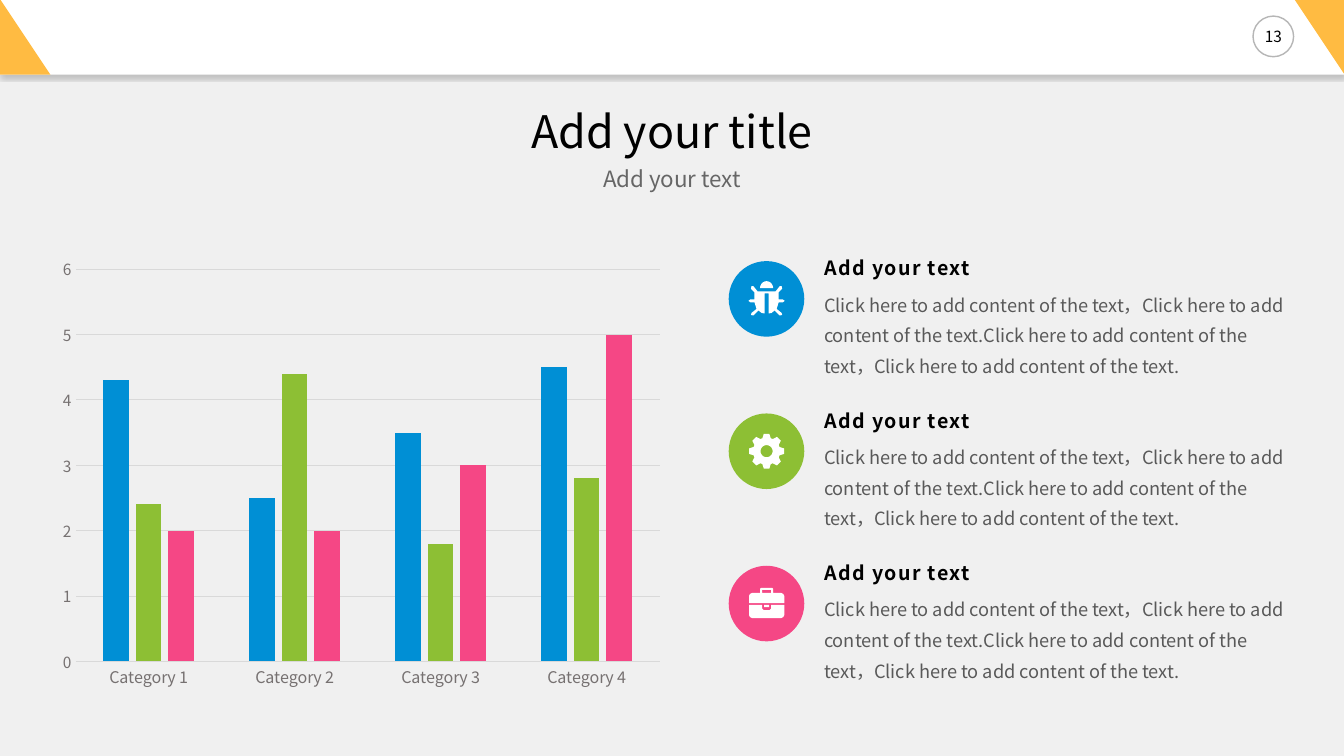
"""Build a slide with a clustered column chart and three icon-marked text blocks."""
import math

import lxml.etree
import pptx
import pptx.chart.data
import pptx.dml.color
import pptx.enum.chart
import pptx.enum.shapes
import pptx.enum.text
import pptx.oxml
import pptx.oxml.ns
import pptx.util

Pt = pptx.util.Pt
RGBColor = pptx.dml.color.RGBColor
SHAPE = pptx.enum.shapes.MSO_SHAPE
ALIGN = pptx.enum.text.PP_ALIGN
TICK = pptx.enum.chart.XL_TICK_MARK

BACKGROUND = RGBColor(0xF0, 0xF0, 0xF0)
WHITE = RGBColor(0xFF, 0xFF, 0xFF)
BLACK = RGBColor(0, 0, 0)
AMBER = RGBColor(0xFF, 0xBB, 0x42)
RING = RGBColor(0xB6, 0xB6, 0xB6)
BLUE = RGBColor(0x00, 0x8F, 0xD5)
GREEN = RGBColor(0x8D, 0xBF, 0x34)
PINK = RGBColor(0xF5, 0x47, 0x85)
BODY_GREY = RGBColor(0x59, 0x59, 0x59)
SUBTITLE_GREY = RGBColor(0x66, 0x66, 0x66)
AXIS_GREY = RGBColor(0x76, 0x71, 0x71)
GRID_GREY = RGBColor(0xD9, 0xD9, 0xD9)
FONT = "Noto Sans CJK JP"

deck = pptx.Presentation()
deck.slide_width, deck.slide_height = Pt(960), Pt(540)
slide = deck.slides.add_slide(deck.slide_layouts[6])
slide.background.fill.solid()
slide.background.fill.fore_color.rgb = BACKGROUND


def add_solid(kind, left, top, width, height, color):
    solid = slide.shapes.add_shape(kind, Pt(left), Pt(top), Pt(width), Pt(height))
    solid.shadow.inherit = False
    solid.fill.solid()
    solid.fill.fore_color.rgb = color
    solid.line.fill.background()
    return solid


def add_text(words, left, top, width, height, size, color, spacing=1.0, before=0,
             align=ALIGN.LEFT):
    frame = slide.shapes.add_textbox(Pt(left), Pt(top), Pt(width), Pt(height)).text_frame
    frame.word_wrap = True
    frame.margin_left = frame.margin_right = frame.margin_top = frame.margin_bottom = 0
    frame.text = words
    paragraph = frame.paragraphs[0]
    paragraph.alignment = align
    paragraph.line_spacing = spacing
    paragraph.space_before = Pt(before)
    font = paragraph.runs[0].font
    font.size, font.name, font.color.rgb = Pt(size), FONT, color
    east_asian = lxml.etree.SubElement(paragraph.runs[0].font._element,
                                       pptx.oxml.ns.qn("a:ea"))
    east_asian.set("typeface", FONT)
    return frame


header = add_solid(SHAPE.RECTANGLE, 0, -0.7, 960, 54, WHITE)
effects = header._element.spPr.find(pptx.oxml.ns.qn("a:effectLst"))
effects.append(pptx.oxml.parse_xml(
    '<a:outerShdw xmlns:a="http://schemas.openxmlformats.org/drawingml/2006/main"'
    ' blurRad="38100" dist="25400" dir="5400000" algn="t" rotWithShape="0">'
    '<a:srgbClr val="000000"><a:alpha val="20000"/></a:srgbClr></a:outerShdw>'))
page_ring = add_solid(SHAPE.OVAL, 895, 11.5, 29, 29, WHITE)
page_ring.line.color.rgb = RING
page_ring.line.width = Pt(1)
add_solid(SHAPE.RIGHT_TRIANGLE, 0, -0.7, 36, 54, AMBER)
add_solid(SHAPE.RIGHT_TRIANGLE, 924, -1.4, 36, 54, AMBER).rotation = 180
page_number = add_text("13", 895, 11.5, 29, 29, 11, BLACK, align=ALIGN.CENTER)
page_number.vertical_anchor = pptx.enum.text.MSO_ANCHOR.MIDDLE

add_text("Add your title", 36, 78.5, 888, 39, 32, BLACK, 0.9, align=ALIGN.CENTER)
add_text("Add your text", 36, 120.2, 888, 19.4, 16, SUBTITLE_GREY, 0.9, align=ALIGN.CENTER)

scores = pptx.chart.data.CategoryChartData()
scores.categories = ["Category 1", "Category 2", "Category 3", "Category 4"]
scores.add_series("Series 1", (4.3, 2.5, 3.5, 4.5))
scores.add_series("Series 2", (2.4, 4.4, 1.8, 2.8))
scores.add_series("Series 3", (2, 2, 3, 5))
chart = slide.shapes.add_chart(pptx.enum.chart.XL_CHART_TYPE.COLUMN_CLUSTERED,
                               Pt(36), Pt(178), Pt(444), Pt(319.5), scores).chart
chart.has_legend = chart.has_title = False
chart.font.name, chart.font.size = FONT, Pt(10)
columns = chart.plots[0]
columns.gap_width, columns.overlap, columns.vary_by_categories = 219, -27, False
for series, color in zip(columns.series, (BLUE, GREEN, PINK)):
    series.format.fill.solid()
    series.format.fill.fore_color.rgb = color
for axis, size in ((chart.category_axis, 11.5), (chart.value_axis, 11)):
    axis.major_tick_mark = axis.minor_tick_mark = TICK.NONE
    labels = axis.tick_labels.font
    labels.size, labels.name, labels.color.rgb = Pt(size), FONT, AXIS_GREY
chart.value_axis.minimum_scale, chart.value_axis.maximum_scale = 0, 6
chart.value_axis.major_unit = 1
chart.value_axis.format.line.fill.background()
for rule in (chart.category_axis.format.line, chart.value_axis.major_gridlines.format.line):
    rule.color.rgb = GRID_GREY
    rule.width = Pt(0.75)

# Each half outline is mirrored about the vertical axis of its disc.
bug_halves = [
    [(2, -5.5), (2, 14.5), (5, 14), (8, 11.5), (13, 16.5), (15.5, 16), (15, 14),
     (10, 10), (12, 3.5), (16, 3.5), (18, 2), (16, 0.5), (12, 0.5), (12, -6.5),
     (15.5, -10), (15, -12.5), (13, -12.5), (9, -7.5)],
    [(6.5 * math.sin(math.radians(a)), -10.5 - 7 * math.cos(math.radians(a)))
     for a in range(0, 91, 10)],
]
gear_rim = [(13.5, -18), (17.5, -9), (17.5, 9), (13.5, 18)]
gear_halves = [
    [(r * math.sin(math.radians(tooth + a)), -r * math.cos(math.radians(tooth + a)))
     for tooth in range(0, 181, 45) for r, a in gear_rim if 0 <= tooth + a <= 180],
    [(6 * math.sin(math.radians(a)), -6 * math.cos(math.radians(a)))
     for a in range(0, 181, 15)],
]
briefcase_halves = [
    [(5.5, -15.5), (6.5, -14.5), (6.5, -10.5), (14.5, -10.5), (16.5, -9.5),
     (17.5, -7.5), (17.5, -0.5)],
    [(4.5, -13.5), (4.5, -10.5)],
    [(3, 6.5), (4.5, 5), (4.5, 1.5), (17.5, 1.5), (17.5, 11.5), (16.5, 13.5), (14.5, 14.5)],
    [(2.5, 1.5), (2.5, 3.5)],
]

CONTENT = ("Click here to add content of the text，Click here to add content of the text."
           "Click here to add content of the text，Click here to add content of the text.")
topics = ((BLUE, bug_halves), (GREEN, gear_halves), (PINK, briefcase_halves))
for row, (color, halves) in enumerate(topics):
    offset = row * 108.8
    heading = add_text("Add your text", 588.7, 185 + offset, 335.6, 25, 14, BLACK, 0.9, 10)
    heading_font = heading.paragraphs[0].runs[0].font
    heading_font.bold = True
    heading_font._element.set("spc", "100")
    add_text(CONTENT, 588.7, 203.8 + offset, 335.6, 65.5, 13, BODY_GREY, 1.4, 10)

    add_solid(SHAPE.OVAL, 520.5, 186.5 + offset, 54, 54, color)
    outlines = [[(x * 100, y * 100) for x, y in half + [(-x, y) for x, y in reversed(half)]]
                for half in halves]
    builder = slide.shapes.build_freeform(*outlines[0][0], scale=Pt(0.72) / 100)
    builder.add_line_segments(outlines[0][1:], close=True)
    for outline in outlines[1:]:
        builder.move_to(*outline[0])
        builder.add_line_segments(outline[1:], close=True)
    icon = builder.convert_to_shape(Pt(547.6), Pt(213.5 + offset))
    icon.shadow.inherit = False
    icon.fill.solid()
    icon.fill.fore_color.rgb = WHITE
    icon.line.fill.background()

deck.save("out.pptx")
